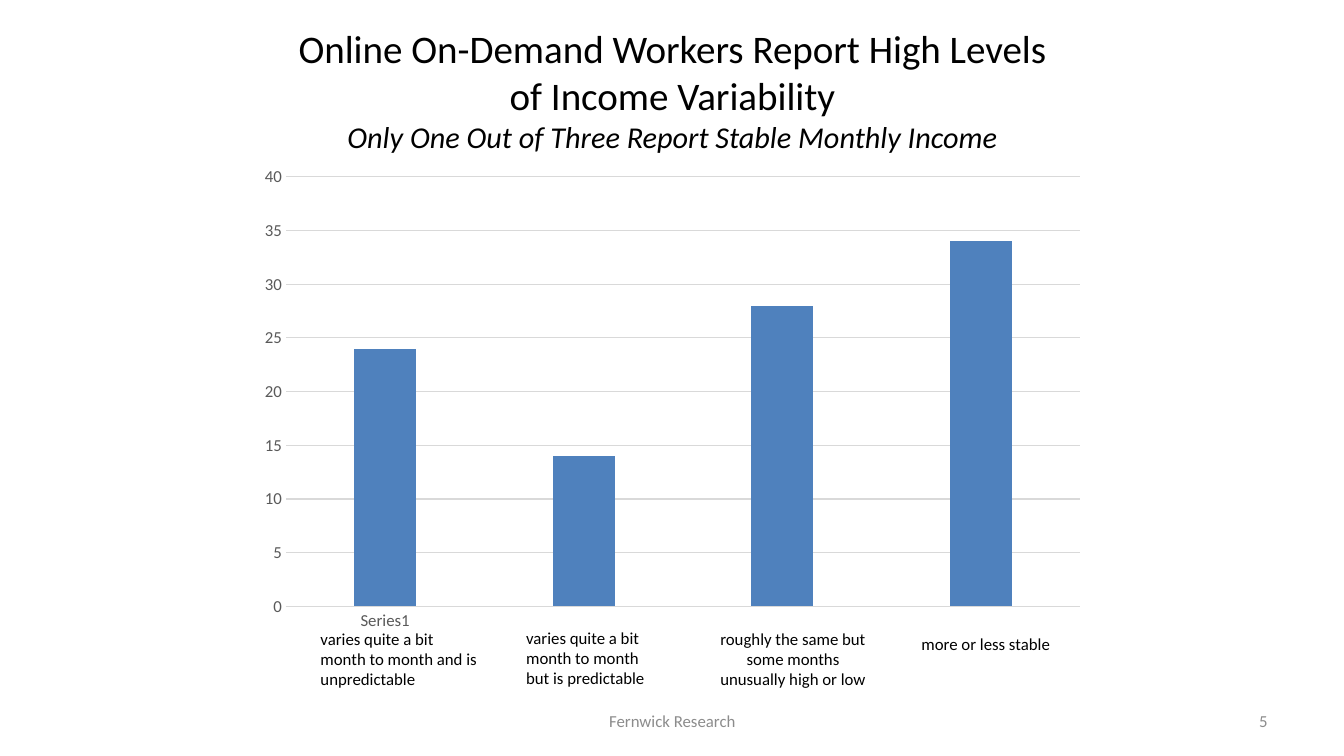
"""Build a slide with a column chart of income variability among on-demand workers."""
from dataclasses import dataclass

import pptx
import pptx.chart.data
import pptx.dml.color
import pptx.enum.chart
import pptx.enum.text
import pptx.util

WIDTH, HEIGHT = 13.33, 7.5
FONT, BLACK, GREY, AXIS, GRID, BAR = "Calibri", "000000", "8C8C8C", "595959", "D9D9D9", "4F81BD"
ALIGN = pptx.enum.text.PP_ALIGN
ANCHOR = pptx.enum.text.MSO_ANCHOR


@dataclass(frozen=True)
class Box:
    """A rectangle in percent of the slide's width and height."""
    left: float
    top: float
    width: float
    height: float

    def emu(self) -> list[int]:
        """Return left, top, width and height as lengths."""
        shares = (self.left, self.top, self.width, self.height)
        return [pptx.util.Inches(share / 100 * side)
                for share, side in zip(shares, (WIDTH, HEIGHT, WIDTH, HEIGHT))]


@dataclass(frozen=True)
class Line:
    """One paragraph of text."""
    text: str
    size: float = 12
    italic: bool = False


@dataclass(frozen=True)
class TextBlock:
    """A text box with paragraphs of one colour and alignment."""
    box: Box
    lines: tuple[Line, ...]
    align: ALIGN = ALIGN.LEFT
    anchor: ANCHOR = ANCHOR.TOP
    color: str = BLACK
    wrap: bool = True
    bottom_inset: float = 0.05


TITLE = TextBlock(
    Box(13.2, 5.47, 73.67, 16.67),
    (Line("Online On-Demand Workers Report High Levels", 27.9),
     Line("of Income Variability", 27.9),
     Line("Only One Out of Three Report Stable Monthly Income", 21.6, True)),
    ALIGN.CENTER, ANCHOR.MIDDLE, bottom_inset=0.34)
FOOTERS = (
    TextBlock(Box(34.2, 92.67, 31.66, 5.33), (Line("Fernwick Research"),),
              ALIGN.CENTER, ANCHOR.MIDDLE, GREY),
    TextBlock(Box(71.72, 92.67, 23.33, 5.33), (Line("5"),),
              ALIGN.RIGHT, ANCHOR.MIDDLE, GREY),
)
BAR_LABELS = (
    TextBlock(Box(23.11, 82.53, 13.13, 9.47),
              (Line("varies quite a bit month to month and is unpredictable"),)),
    TextBlock(Box(38.41, 82.4, 11.85, 9.47),
              (Line("varies quite a bit month to month but is predictable"),)),
    TextBlock(Box(52.74, 82.53, 12.53, 9.47),
              (Line("roughly the same but some months unusually high or low"),), ALIGN.CENTER),
    TextBlock(Box(67.82, 83.2, 11.18, 4), (Line("more or less stable"),), wrap=False),
)
CHART_BOX = Box(18.45, 20.8, 63.17, 63.87)
CATEGORIES = ("Series1", "", "", "")
VALUES = (24, 14, 28, 34)


def rgb(color: str) -> pptx.dml.color.RGBColor:
    """Turn a hex string into a colour."""
    return pptx.dml.color.RGBColor.from_string(color)


def set_font(font, size: float, color: str, italic: bool = False) -> None:
    """Set face, size, colour and slant of a font."""
    font.name, font.size, font.italic = FONT, pptx.util.Pt(size), italic
    font.color.rgb = rgb(color)


def draw_text(slide, block: TextBlock) -> None:
    """Draw one text block."""
    tf = slide.shapes.add_textbox(*block.box.emu()).text_frame
    tf.word_wrap = block.wrap
    tf.vertical_anchor = block.anchor
    tf.margin_bottom = pptx.util.Inches(block.bottom_inset)
    for i, line in enumerate(block.lines):
        p = tf.add_paragraph() if i else tf.paragraphs[0]
        p.text = line.text
        p.alignment = block.align
        set_font(p.font, line.size, block.color, line.italic)


def style_line(line) -> None:
    """Give a chart line the thin grid style."""
    line.color.rgb = rgb(GRID)
    line.width = pptx.util.Pt(0.75)


def draw_chart(slide) -> None:
    """Draw the column chart."""
    data = pptx.chart.data.CategoryChartData()
    data.categories = CATEGORIES
    data.add_series("Series 1", VALUES)
    chart = slide.shapes.add_chart(
        pptx.enum.chart.XL_CHART_TYPE.COLUMN_CLUSTERED, *CHART_BOX.emu(), data).chart
    chart.has_legend = chart.has_title = False
    set_font(chart.font, 10, BLACK)
    plot = chart.plots[0]
    plot.gap_width, plot.overlap, plot.vary_by_categories = 219, -27, False
    fill = plot.series[0].format.fill
    fill.solid()
    fill.fore_color.rgb = rgb(BAR)
    for axis in (chart.category_axis, chart.value_axis):
        axis.major_tick_mark = axis.minor_tick_mark = pptx.enum.chart.XL_TICK_MARK.NONE
        set_font(axis.tick_labels.font, 12, AXIS)
    style_line(chart.category_axis.format.line)
    value_axis = chart.value_axis
    value_axis.minimum_scale, value_axis.maximum_scale, value_axis.major_unit = 0, 40, 5
    value_axis.format.line.fill.background()
    style_line(value_axis.major_gridlines.format.line)


def main() -> None:
    """Build and save the slide."""
    prs = pptx.Presentation()
    prs.slide_width, prs.slide_height = pptx.util.Inches(WIDTH), pptx.util.Inches(HEIGHT)
    slide = prs.slides.add_slide(prs.slide_layouts[6])
    for block in (TITLE, *FOOTERS):
        draw_text(slide, block)
    draw_chart(slide)
    for block in BAR_LABELS:
        draw_text(slide, block)
    prs.save("out.pptx")


if __name__ == "__main__":
    main()
